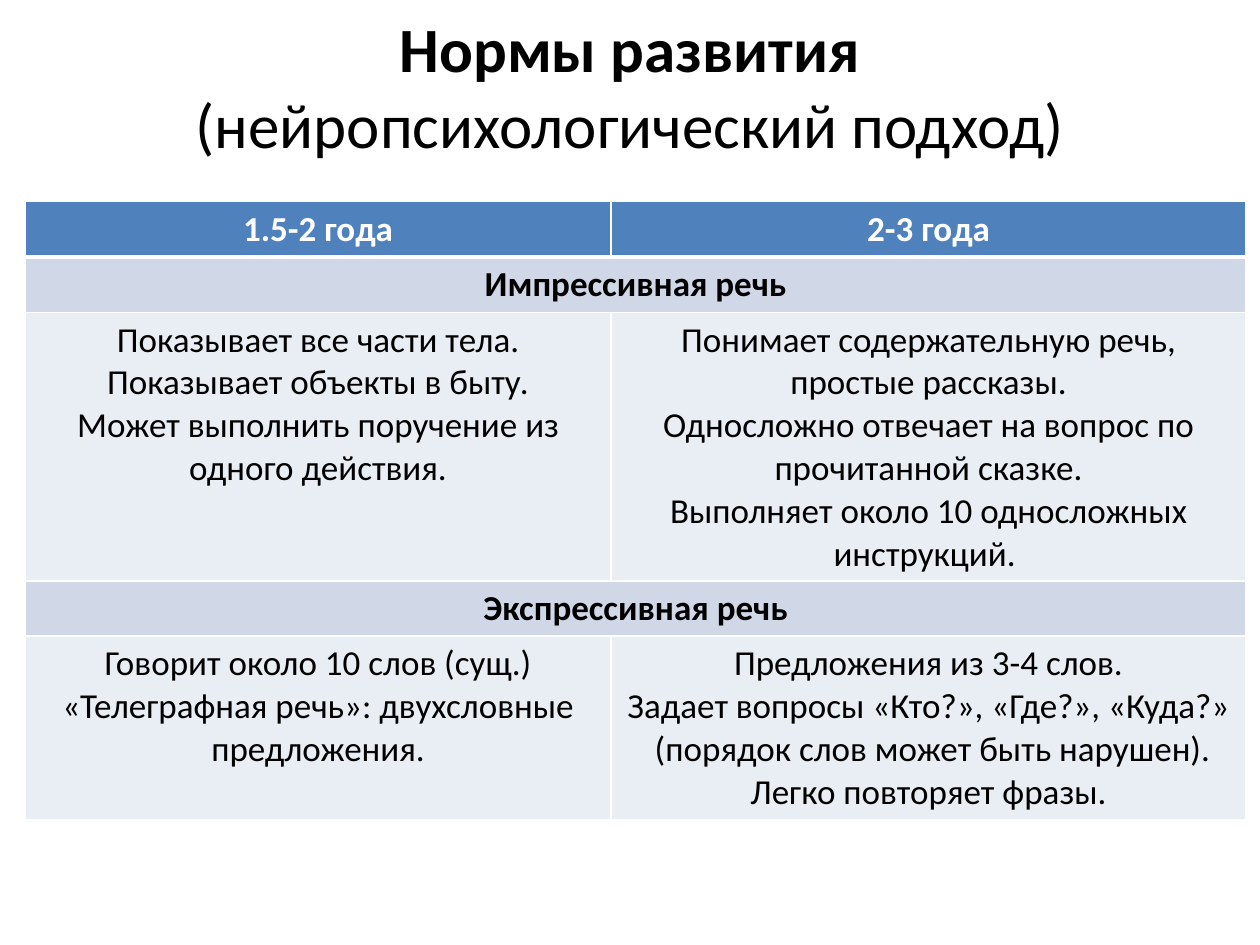
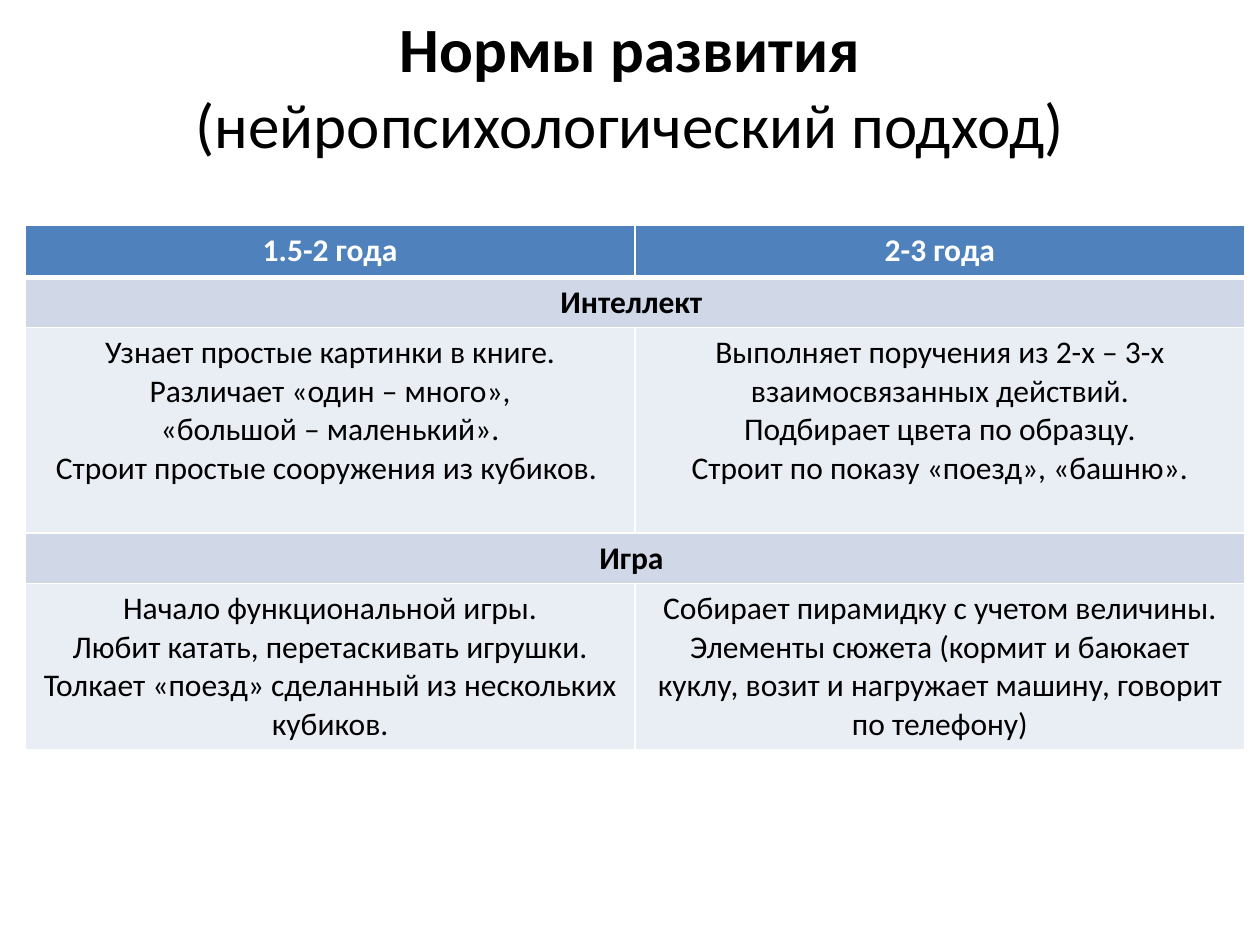
from dataclasses import dataclass

from lxml.etree import SubElement
from pptx import Presentation
from pptx.dml.color import RGBColor
from pptx.enum.text import MSO_ANCHOR, PP_ALIGN
from pptx.oxml.ns import qn
from pptx.util import Inches, Pt

TITLE = ("Нормы развития", "(нейропсихологический подход)")
AGES = ("1.5-2 года", "2-3 года")

# Each section: heading, then one list of paragraphs per age; \v is a line break.
SLIDES = [
    {
        "top": 1.6, "text_size": 20,
        "columns": (4.65, 5.04),
        "rows": (0.44, 0.44, 2.13, 0.44, 1.46),
        "sections": [
            ("Импрессивная речь",
             ["Показывает все части тела.",
              "Показывает объекты в быту.",
              "Может выполнить поручение из одного действия."],
             ["Понимает содержательную речь, простые рассказы.",
              "Односложно отвечает на вопрос по прочитанной сказке.",
              "Выполняет около 10 односложных инструкций. "]),
            ("Экспрессивная речь",
             ["Говорит около 10 слов (сущ.)",
              "«Телеграфная речь»: двухсловные предложения."],
             ["Предложения из 3-4 слов.",
              "Задает вопросы «Кто?», «Где?», «Куда?»\v (порядок слов может быть нарушен).",
              "Легко повторяет фразы."]),
        ],
    },
    {
        "top": 1.79, "text_size": 18,
        "columns": (4.84, 4.84),
        "rows": (0.41, 0.4, 1.63, 0.4, 1.32),
        "sections": [
            ("Интеллект ",
             ["Узнает простые картинки в книге.",
              "Различает «один – много»,",
              "«большой – маленький».",
              "Строит простые сооружения из кубиков. "],
             ["Выполняет поручения из 2-х – 3-х взаимосвязанных действий.",
              "Подбирает цвета по образцу.",
              "Строит по показу «поезд», «башню»."]),
            ("Игра ",
             ["Начало функциональной игры.",
              "Любит катать, перетаскивать игрушки.\vТолкает «поезд» сделанный из нескольких кубиков."],
             ["Собирает пирамидку с учетом величины.",
              "Элементы сюжета (кормит и баюкает куклу, возит и нагружает машину, говорит по телефону)"]),
        ],
    },
]


@dataclass(frozen=True)
class Theme:
    font: str = "Calibri"
    title_size: int = 36
    text: str = "000000"
    white: str = "FFFFFF"
    header: str = "4F81BD"
    section: str = "D0D8E8"
    body: str = "E9EDF4"
    border: float = 1
    header_rule: float = 3


THEME = Theme()


def style_paragraph(paragraph, size, color):
    paragraph.alignment = PP_ALIGN.CENTER
    font = paragraph.font
    font.name, font.size = THEME.font, Pt(size)
    font.color.rgb = RGBColor.from_string(color)


def add_title(slide):
    box = slide.shapes.add_textbox(Inches(0.5), Inches(0.05), Inches(9), Inches(1.25))
    frame = box.text_frame
    frame.word_wrap = True
    frame.vertical_anchor = MSO_ANCHOR.MIDDLE
    paragraph = frame.paragraphs[0]
    style_paragraph(paragraph, THEME.title_size, THEME.text)
    name, approach = TITLE
    run = paragraph.add_run()
    run.text, run.font.bold = name, True
    paragraph.add_line_break()
    paragraph.add_run().text = approach


def set_borders(cell, top, bottom):
    properties = cell._tc.get_or_add_tcPr()
    widths = {"lnL": THEME.border, "lnR": THEME.border, "lnT": top, "lnB": bottom}
    for side, width in widths.items():
        line = SubElement(properties, qn(f"a:{side}"), w=str(Pt(width)))
        fill = SubElement(line, qn("a:solidFill"))
        SubElement(fill, qn("a:srgbClr"), val=THEME.white)


def fill_cell(cell, lines, size, color, bold):
    cell.text_frame.text = "\n".join(lines)
    for paragraph in cell.text_frame.paragraphs:
        style_paragraph(paragraph, size, color)
        paragraph.font.bold = bold


def table_rows(sections):
    """Yield the texts, fill, text colour and boldness of each row."""
    yield [[age] for age in AGES], THEME.header, THEME.white, True
    for heading, *columns in sections:
        yield [[heading]], THEME.section, THEME.text, True
        yield columns, THEME.body, THEME.text, False


def add_norms_table(slide, content):
    widths, heights = content["columns"], content["rows"]
    table = slide.shapes.add_table(
        len(heights), len(widths), Inches(0.2), Inches(content["top"]),
        Inches(sum(widths)), Inches(sum(heights))).table
    for column, width in zip(table.columns, widths):
        column.width = Inches(width)
    for row, height in zip(table.rows, heights):
        row.height = Inches(height)
    for index, (texts, fill, color, bold) in enumerate(table_rows(content["sections"])):
        cells = list(table.rows[index].cells)
        for cell in cells:
            set_borders(cell,
                        THEME.header_rule if index == 1 else THEME.border,
                        THEME.header_rule if index == 0 else THEME.border)
            cell.fill.solid()
            cell.fill.fore_color.rgb = RGBColor.from_string(fill)
        if len(texts) == 1:
            cells[0].merge(cells[-1])
        for cell, lines in zip(cells, texts):
            fill_cell(cell, lines, content["text_size"], color, bold)


def main():
    presentation = Presentation()
    presentation.slide_width, presentation.slide_height = Inches(10), Inches(7.5)
    blank = presentation.slide_layouts[6]
    for content in SLIDES:
        slide = presentation.slides.add_slide(blank)
        add_title(slide)
        add_norms_table(slide, content)
    presentation.save("out.pptx")


if __name__ == "__main__":
    main()
